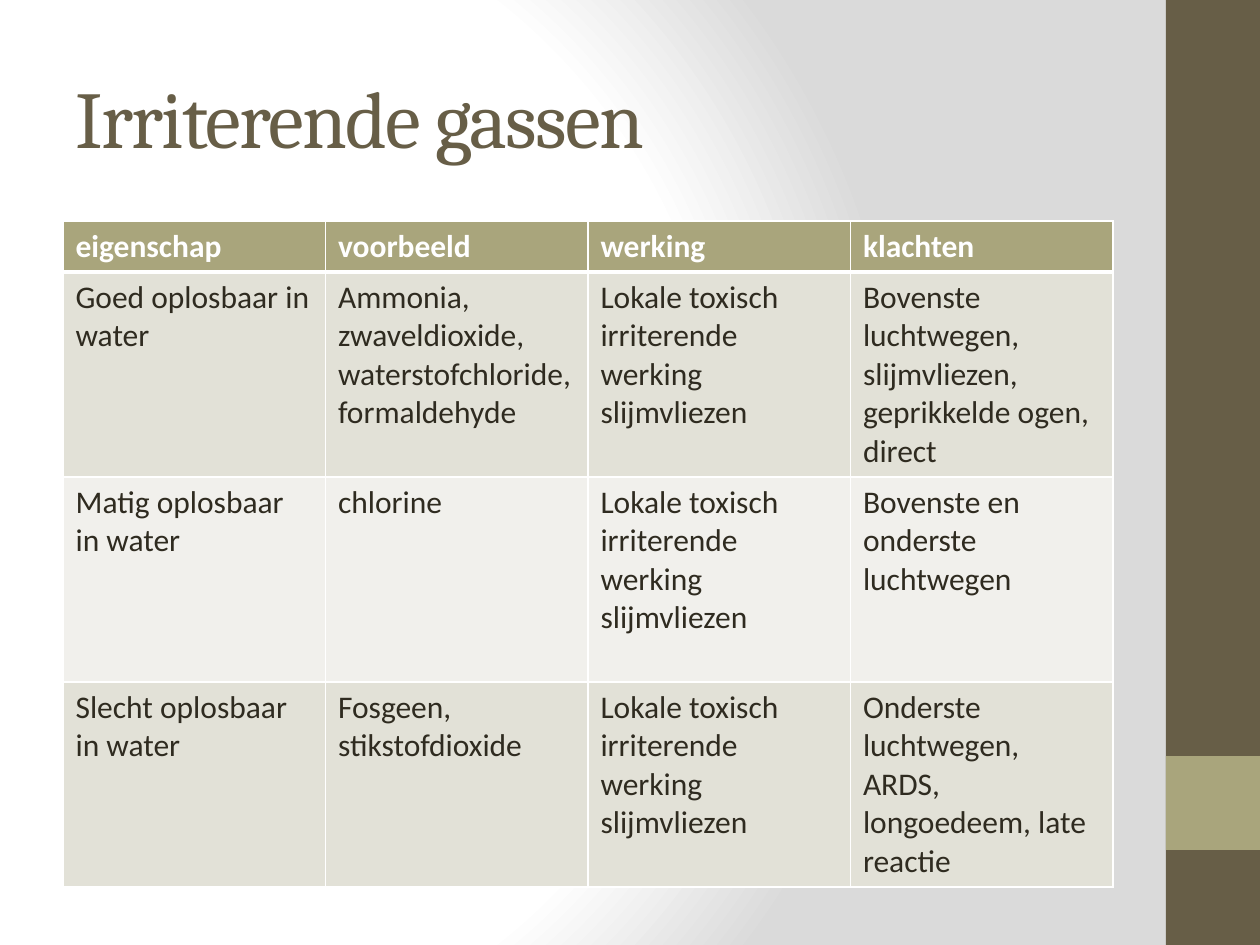
from lxml import etree
from pptx import Presentation
from pptx import util as u
from pptx.dml.color import RGBColor
from pptx.enum import shapes, text
from pptx.oxml import parse_xml
from pptx.oxml.ns import qn

TITLE = "Irriterende gassen"
LOCAL = ["Lokale toxisch irriterende werking", "slijmvliezen"]
ROWS = [
    [["eigenschap"], ["voorbeeld"], ["werking"], ["klachten"]],
    [["Goed oplosbaar in water"],
     ["Ammonia, zwaveldioxide, waterstofchloride, formaldehyde"],
     LOCAL,
     ["Bovenste luchtwegen, slijmvliezen, geprikkelde ogen, direct"]],
    [["Matig oplosbaar in water"], ["chlorine"], LOCAL,
     ["Bovenste en onderste luchtwegen"]],
    [["Slecht oplosbaar in water"], ["Fosgeen, stikstofdioxide"], LOCAL,
     ["Onderste luchtwegen, ARDS, longoedeem, late reactie"]],
]
COLORS = {"white": "FFFFFF", "gray": "DADADA", "brown": "675E47",
          "olive": "A9A57C", "ink": "2F2B20", "dark": "E2E1D7",
          "light": "F1F0EC"}
BARS = [((1166, 0, 94, 945), "brown"), ((1166, 756, 94, 94), "olive")]
TITLE_BOX = (63, 38, 1050, 157)
TABLE_BOX = (63, 221, 1050, 665)
HEAD_H = 50
STOPS = [(0, "white"), (75, "white"), (100, "gray")]


def px(n):
    return round(n * u.Inches(1) / 126)


def rgb(name):
    return RGBColor.from_string(COLORS[name])


def add_run(par, words, size, font, color, bold=False):
    run = par.add_run()
    run.text = words
    run.font.size = u.Pt(size)
    run.font.name = font
    run.font.bold = bold
    run.font.color.rgb = rgb(color)
    return run


def set_back(slide):
    """Give the slide a circular gradient background."""
    fill = slide.background.fill
    fill.solid()
    fill.fore_color.rgb = rgb("white")
    old = next(slide.element.iter(qn("a:solidFill")))
    stops = "".join(
        f'<a:gs pos="{pos * 1000}"><a:srgbClr val="{COLORS[name]}"/></a:gs>'
        for pos, name in STOPS)
    grad = parse_xml(
        '<a:gradFill xmlns:a="http://schemas.openxmlformats.org/drawingml/2006/main"'
        f' rotWithShape="1"><a:gsLst>{stops}</a:gsLst><a:path path="circle">'
        '<a:fillToRect l="20000" t="50000" r="100000" b="50000"/>'
        '</a:path></a:gradFill>')
    old.getparent().replace(old, grad)


def set_edges(cell, top, bottom):
    """Draw white cell borders; top and bottom are widths in points."""
    props = cell._tc.get_or_add_tcPr()
    edges = [("L", 1), ("R", 1), ("T", top), ("B", bottom)]
    for i, (side, width) in enumerate(edges):
        line = etree.Element(qn("a:ln" + side), w=str(u.Pt(width)))
        fill = etree.SubElement(line, qn("a:solidFill"))
        etree.SubElement(fill, qn("a:srgbClr"), val=COLORS["white"])
        props.insert(i, line)


def add_bars(slide):
    for box, color in BARS:
        bar = slide.shapes.add_shape(shapes.MSO_SHAPE.RECTANGLE, *map(px, box))
        bar.shadow.inherit = False
        bar.fill.solid()
        bar.fill.fore_color.rgb = rgb(color)
        bar.line.fill.background()


def set_title(slide):
    title = slide.shapes.title
    title.left, title.top, title.width, title.height = map(px, TITLE_BOX)
    frame = title.text_frame
    frame.auto_size = text.MSO_AUTO_SIZE.NONE
    frame.vertical_anchor = text.MSO_ANCHOR.MIDDLE
    par = frame.paragraphs[0]
    par.alignment = text.PP_ALIGN.LEFT
    run = add_run(par, TITLE, 46, "Cambria", "brown")
    run.font._element.set("spc", "-100")


def add_grid(slide):
    frame = slide.shapes.add_table(len(ROWS), len(ROWS[0]), *map(px, TABLE_BOX))
    table = frame.table
    body_h = (TABLE_BOX[3] - HEAD_H) / (len(ROWS) - 1)
    for r, row in enumerate(ROWS):
        head = r == 0
        table.rows[r].height = px(HEAD_H if head else body_h)
        shade = "olive" if head else "dark" if r % 2 else "light"
        for c, lines in enumerate(row):
            cell = table.cell(r, c)
            cell.fill.solid()
            cell.fill.fore_color.rgb = rgb(shade)
            set_edges(cell, 3 if r == 1 else 1, 3 if head else 1)
            for i, line in enumerate(lines):
                body = cell.text_frame
                par = body.add_paragraph() if i else body.paragraphs[0]
                add_run(par, line, 18, "Calibri",
                        "white" if head else "ink", head)


def main():
    prs = Presentation()
    prs.slide_width, prs.slide_height = px(1260), px(945)
    slide = prs.slides.add_slide(prs.slide_layouts[5])
    set_back(slide)
    add_bars(slide)
    set_title(slide)
    add_grid(slide)
    prs.save("out.pptx")


if __name__ == "__main__":
    main()
